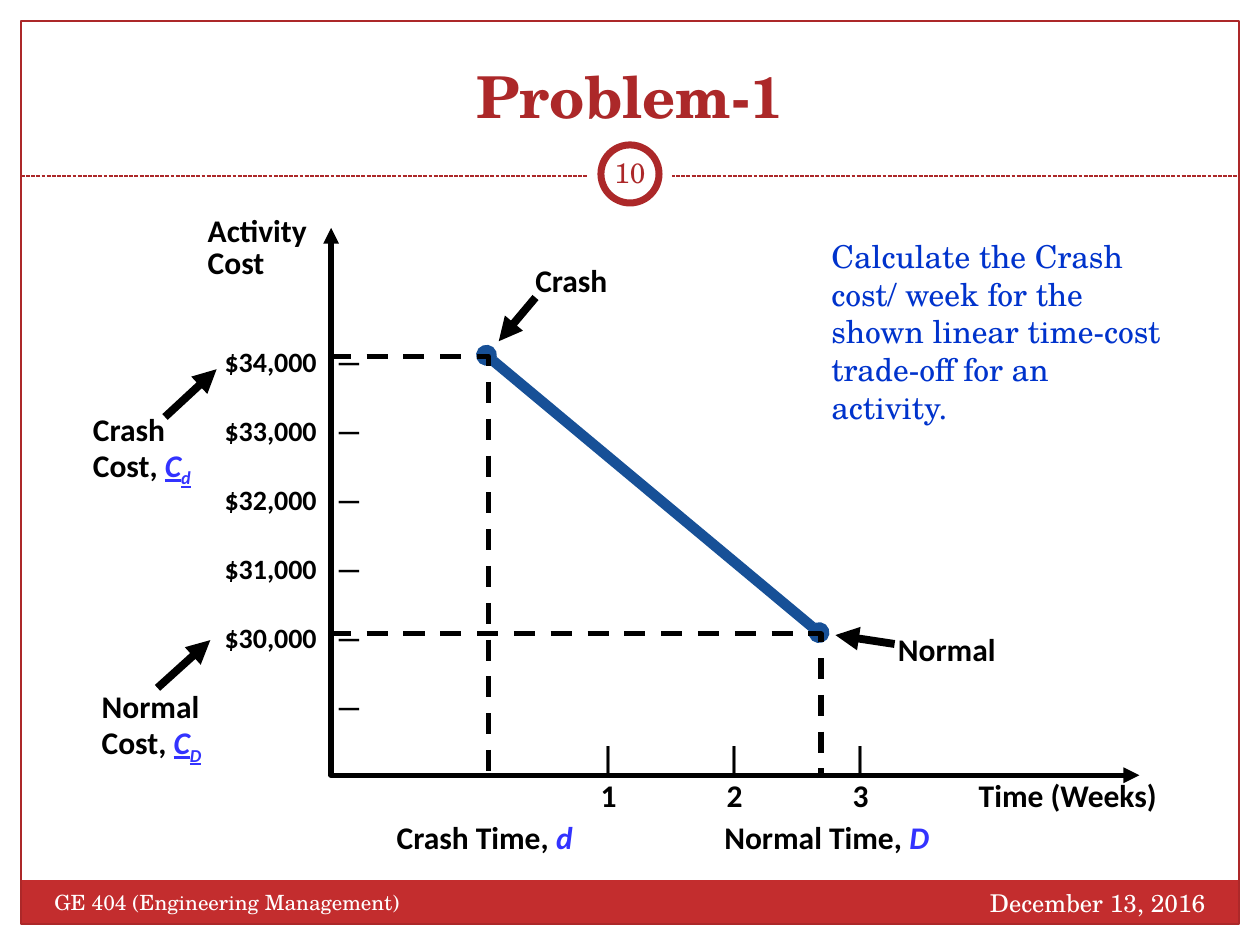
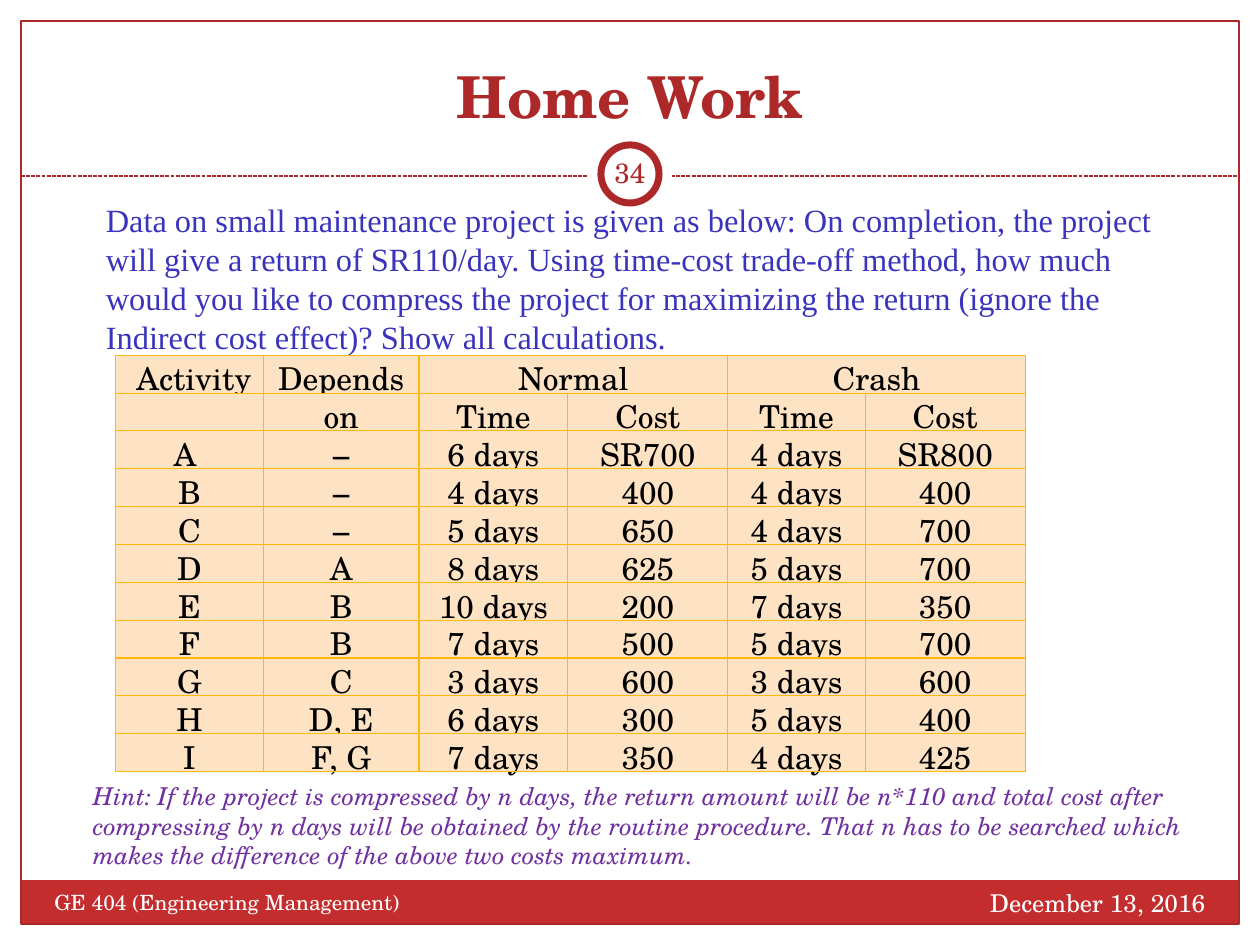
from lxml.etree import SubElement
from pptx import Presentation
from pptx.dml.color import RGBColor
from pptx.enum.dml import MSO_LINE_DASH_STYLE as Dash
from pptx.enum.shapes import MSO_CONNECTOR as Connector, MSO_SHAPE as Shape
from pptx.enum.text import MSO_ANCHOR as Anchor, MSO_AUTO_SIZE as AutoSize, PP_ALIGN as Align
from pptx.oxml.ns import qn
from pptx.util import Pt

COLOURS = {
    "white": "FFFFFF", "black": "000000", "crimson": "AC2829", "band": "C32D2E",
    "trade_off": "175097", "symbol": "3333FF", "question": "0033CC",
    "problem": "3A34BC", "hint": "7030A0", "cell": "FEE2C4", "border": "FEB80A",
}
SERIF = "TeX Gyre Schola"
LABEL = {"font": "Calibri", "size": 18, "bold": True}
TIGHT = {**LABEL, "line_spacing": 0.85}
SYMBOL = {"colour": "symbol", "italic": True}
COST_SYMBOL = {**SYMBOL, "underline": True}
SUBSCRIPT = {**COST_SYMBOL, "baseline": -25000}

COLUMN_WIDTHS = [84.5, 89, 85, 91.5, 78.5, 91.5]
ROW_HEIGHT = 21.6
ACTIVITIES = [
    ["A ", "−", "6 days", "SR700", "4 days", "SR800"],
    ["B", "−", "4 days", "400", "4 days", "400"],
    ["C", "−", "5 days", "650", "4 days", "700"],
    ["D", "A", "8 days", "625", "5 days", "700"],
    ["E", "B", "10 days", "200", "7 days", "350"],
    ["F", "B", "7 days", "500", "5 days", "700"],
    ["G", "C", "3 days", "600", "3 days", "600"],
    ["H", "D, E", "6 days", "300", "5 days", "400"],
    ["I", "F, G", "7 days", "350", "4 days", "425"],
]
HEADINGS = [
    [" Activity", "Depends", "Normal", "", "Crash", ""],
    ["", "on", "Time", "Cost", "Time", "Cost"],
]


def rgb(name):
    return RGBColor.from_string(COLOURS[name])


def points(*lengths):
    return [Pt(length) for length in lengths]


def format_run(run, font=SERIF, size=18, colour="black", bold=False, italic=False,
               underline=False, baseline=None):
    run.font.name = font
    run.font.size = Pt(size)
    run.font.color.rgb = rgb(colour)
    run.font.bold = bold
    run.font.italic = italic
    run.font.underline = underline
    if baseline is not None:
        run.font._element.set("baseline", str(baseline))


def write(frame, text, align=Align.LEFT, line_spacing=None, tabs=(), **run_format):
    """Fill a frame; text is a string (one paragraph per line) or a list of (run, format)."""
    lines = [[(line, {})] for line in text.split("\n")] if isinstance(text, str) else [text]
    for index, runs in enumerate(lines):
        paragraph = frame.add_paragraph() if index else frame.paragraphs[0]
        paragraph.alignment = align
        if line_spacing:
            paragraph.line_spacing = line_spacing
        if tabs:
            tab_list = SubElement(paragraph._p.get_or_add_pPr(), qn("a:tabLst"))
            for position, kind in tabs:
                SubElement(tab_list, qn("a:tab"), pos=str(Pt(position)), algn=kind)
        for words, changes in runs:
            run = paragraph.add_run()
            run.text = words
            format_run(run, **{**run_format, **changes})


def add_text(slide, text, box, anchor=Anchor.TOP, side_inset=7.2, **text_format):
    frame = slide.shapes.add_textbox(*points(*box)).text_frame
    frame.word_wrap = True
    frame.vertical_anchor = anchor
    frame.margin_left = frame.margin_right = Pt(side_inset)
    write(frame, text, **text_format)


def style_line(shape, colour, width, dash=None, head=None, tail=None, end_size="med"):
    shape.line.color.rgb = rgb(colour)
    shape.line.width = Pt(width)
    if dash:
        shape.line.dash_style = dash
    outline = shape._element.spPr.find(qn("a:ln"))
    for end, kind in (("a:headEnd", head), ("a:tailEnd", tail)):
        if kind:
            SubElement(outline, qn(end), type=kind, w=end_size, len=end_size)


def add_line(slide, start, end, **line_format):
    line = slide.shapes.add_connector(Connector.STRAIGHT, *points(*start, *end))
    style_line(line, **line_format)
    SubElement(line._element.spPr, qn("a:effectLst"))


def add_pointer(slide, start, end):
    add_line(slide, start, end, colour="black", width=4.5, tail="triangle")


def add_path(slide, start, *corners, **line_format):
    builder = slide.shapes.build_freeform(*points(*start))
    builder.add_line_segments([points(*corner) for corner in corners], close=False)
    path = builder.convert_to_shape()
    path.shadow.inherit = False
    path.fill.background()
    style_line(path, colour="black", width=3, **line_format)


def add_area(slide, kind, box, fill=None, line_width=None):
    area = slide.shapes.add_shape(kind, *points(*box))
    area.shadow.inherit = False
    if fill:
        area.fill.solid()
        area.fill.fore_color.rgb = rgb(fill)
    else:
        area.fill.background()
    if line_width:
        style_line(area, "crimson", line_width)
    else:
        area.line.fill.background()


def add_slide(presentation, title, number):
    """Add a slide with the shared frame, footer band, number ring and title."""
    slide = presentation.slides.add_slide(presentation.slide_layouts[5])
    add_area(slide, Shape.RECTANGLE, (12, 503, 696, 24.6), fill="band")
    add_area(slide, Shape.RECTANGLE, (12, 12, 696, 516), line_width=0.75)
    add_line(slide, (12, 100.6), (708, 100.6), colour="crimson", width=0.75,
             dash=Dash.SQUARE_DOT)
    add_area(slide, Shape.OVAL, (336, 75.6, 48, 48), fill="white")
    add_area(slide, Shape.OVAL, (343.4, 82.8, 33.2, 33.2), fill="white", line_width=4)

    heading = slide.shapes.title
    heading.left, heading.top, heading.width, heading.height = points(24, 18, 672, 60)
    heading.text_frame.auto_size = AutoSize.NONE
    heading.text_frame.vertical_anchor = Anchor.BOTTOM
    write(heading.text_frame, title, align=Align.CENTER, size=33, colour="crimson", bold=True)

    add_text(slide, "December 13, 2016", (456, 504, 240, 29), align=Align.RIGHT,
             size=14, colour="white")
    add_text(slide, "GE 404 (Engineering Management)", (24, 504.7, 282, 29),
             size=12, colour="white")
    add_text(slide, str(number), (342, 81.4, 36, 34.6), anchor=Anchor.MIDDLE, side_inset=3.6,
             align=Align.CENTER, size=16, colour="crimson")
    return slide


def add_axes(slide):
    week_tabs = [(72 * week, "l") for week in range(1, 5)]
    add_text(slide, "\t|\t|\t|\n\t1\t2\t3\tTime (Weeks)", (264.2, 418.3, 422, 50.4),
             tabs=week_tabs, **LABEL)
    add_path(slide, (189.2, 130.2), (189.2, 443), (651, 443), head="triangle", tail="triangle")
    costs = [f"\t${thousands},000\t—" for thousands in range(34, 29, -1)]
    add_text(slide, "\n".join(costs + ["\t\t—"]), (111.6, 173.5, 120, 244),
             line_spacing=2.05, tabs=[(62.3, "r"), (73.6, "l")], **{**LABEL, "size": 16})
    add_text(slide, "Activity Cost", (111.6, 120.2, 87, 44), **TIGHT)


def add_trade_off(slide):
    crash, normal = (278, 203), (468, 361.5)
    add_line(slide, crash, normal, colour="trade_off", width=6, head="oval", tail="oval",
             end_size="sm")
    for time, cost in (crash, normal):
        add_path(slide, (188.5, cost + 0.7), (time + 1.1, cost + 0.7), (time + 1.1, 443),
                 dash=Dash.DASH)


def add_labels(slide):
    add_text(slide, "Crash", (298.8, 149, 75, 26), **TIGHT)
    add_pointer(slide, (306, 170), (285, 195))
    add_text(slide, "Normal", (506, 360, 81, 26), **TIGHT)
    add_pointer(slide, (511.2, 368), (477.4, 362.9))

    for name, symbol, left, width in (("Crash", "d", 219.6, 116), ("Normal", "D", 406.8, 137)):
        add_text(slide, [(f"{name} Time, ", {}), (symbol, SYMBOL)],
                 (left, 467.3, width, 26), **TIGHT)
    for name, symbol, box, start, end in (
        ("Crash", "d", (46, 234, 75.6, 44.6), (94.3, 238.3), (123.8, 211)),
        ("Normal", "D", (51, 392.4, 87, 44.6), (90, 393.1), (120.2, 365.8)),
    ):
        add_text(slide, [(f"{name} Cost, ", {}), ("C", COST_SYMBOL), (symbol, SUBSCRIPT)],
                 box, **TIGHT)
        add_pointer(slide, start, end)


def format_cell(cell, text):
    properties = cell._tc.get_or_add_tcPr()
    for side in "LRTB":
        border = SubElement(properties, qn(f"a:ln{side}"), w=str(Pt(0.75)))
        fill = SubElement(border, qn("a:solidFill"))
        SubElement(fill, qn("a:srgbClr"), val=COLOURS["border"])
    cell.fill.solid()
    cell.fill.fore_color.rgb = rgb("cell")
    cell.margin_left = cell.margin_right = Pt(3.6)
    cell.margin_top = cell.margin_bottom = 0
    if text:
        write(cell.text_frame, text, align=Align.CENTER)


def add_activity_table(slide):
    rows = HEADINGS + ACTIVITIES
    box = (66, 203, sum(COLUMN_WIDTHS), ROW_HEIGHT * len(rows))
    table = slide.shapes.add_table(len(rows), len(COLUMN_WIDTHS), *points(*box)).table
    table.first_row = table.horz_banding = False
    for column, width in zip(table.columns, COLUMN_WIDTHS):
        column.width = Pt(width)
    for row_index, values in enumerate(rows):
        table.rows[row_index].height = Pt(ROW_HEIGHT)
        for column_index, text in enumerate(values):
            format_cell(table.cell(row_index, column_index), text)
    for first in (2, 4):
        table.cell(0, first).merge(table.cell(0, first + 1))


def main():
    presentation = Presentation()
    presentation.slide_width, presentation.slide_height = points(720, 540)

    problem = add_slide(presentation, "Problem-1", 10)
    add_axes(problem)
    add_trade_off(problem)
    add_labels(problem)
    add_text(problem, "Calculate the Crash cost/ week for the shown linear time-cost "
             "trade-off for an activity.", (468, 131.8, 209, 94.3), colour="question")

    homework = add_slide(presentation, "Home Work", 34)
    add_text(homework, "Data on small maintenance project is given as below: On completion, "
             "the project will give a return of SR110/day. Using time-cost trade-off method, "
             "how much would you like to compress the project for maximizing the return "
             "(ignore the Indirect cost effect)? Show all calculations.",
             (54, 110.5, 625.7, 96.5), anchor=Anchor.MIDDLE, side_inset=6.5,
             font="Times New Roman", size=18.5, colour="problem")
    add_activity_table(homework)
    add_text(homework, "Hint: If the project is compressed by n days, the return amount will "
             "be n*110 and total cost after compressing by n days will be obtained by the "
             "routine procedure. That n has to be searched which makes the difference of the "
             "above two costs maximum.", (46, 442.8, 642, 58.3),
             size=14, colour="hint", italic=True)

    presentation.save("out.pptx")


if __name__ == "__main__":
    main()
